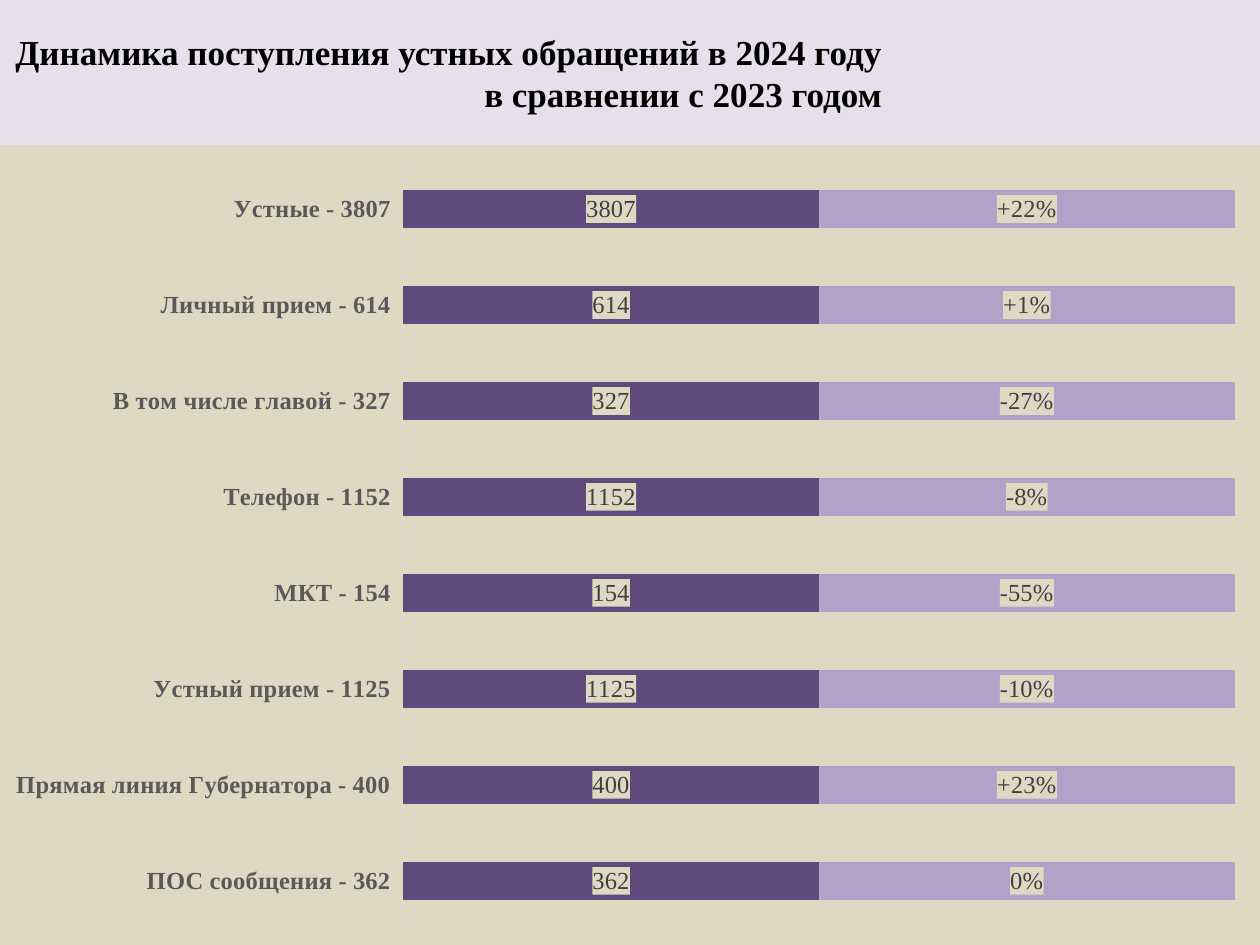
from lxml import etree
from pptx import Presentation
from pptx.chart.data import CategoryChartData
from pptx.dml.color import RGBColor
from pptx.enum.chart import XL_CHART_TYPE, XL_TICK_LABEL_POSITION, XL_TICK_MARK
from pptx.enum.text import MSO_ANCHOR, PP_ALIGN
from pptx.oxml import parse_xml
from pptx.oxml.ns import nsdecls
from pptx.util import Emu, Pt

STACKED = XL_CHART_TYPE.BAR_STACKED_100
NO_TICKS = XL_TICK_MARK.NONE
LOW_LABELS = XL_TICK_LABEL_POSITION.LOW
MIDDLE = MSO_ANCHOR.MIDDLE
RIGHT = PP_ALIGN.RIGHT

PX_PER_INCH = 126
SLIDE_W, SLIDE_H, TITLE_H = 1260, 945, 145
FONT = "Times New Roman"
COLORS = {
    "title_fill": "E6E0EC",
    "title_text": "000000",
    "chart_fill": "DDD9C3",
    "count_bar": "604A7B",
    "change_bar": "B3A2C7",
    "axis_text": "595959",
    "axis_line": "D9D9D9",
    "label_text": "404040",
}

TITLE = "Динамика поступления устных обращений в 2024 году\vв сравнении с 2023 годом"
# Kind of appeal, count in 2024, change from 2023; from top to bottom
APPEALS = [
    ("Устные", 3807, "+22%"),
    ("Личный прием", 614, "+1%"),
    ("В том числе главой", 327, "-27%"),
    ("Телефон", 1152, "-8%"),
    ("МКТ", 154, "-55%"),
    ("Устный прием", 1125, "-10%"),
    ("Прямая линия Губернатора", 400, "+23%"),
    ("ПОС сообщения", 362, "0%"),
]


def px(length):
    return Emu(round(length * 914400 / PX_PER_INCH))


def rgb(name):
    return RGBColor.from_string(COLORS[name])


def style_font(font, size, color, bold):
    font.name = FONT
    font.size = Pt(size)
    font.bold = bold
    font.color.rgb = rgb(color)


def chart_fill():
    """Return a borderless c:spPr in the chart's background colour."""
    return parse_xml(
        f'<c:spPr {nsdecls("c", "a")}><a:solidFill>'
        f'<a:srgbClr val="{COLORS["chart_fill"]}"/></a:solidFill>'
        "<a:ln><a:noFill/></a:ln></c:spPr>"
    )


def add_title(slide):
    title = slide.shapes.title
    title.left, title.top = px(0), px(0)
    title.width, title.height = px(SLIDE_W), px(TITLE_H)
    title.fill.solid()
    title.fill.fore_color.rgb = rgb("title_fill")
    frame = title.text_frame
    frame.text = TITLE
    frame.word_wrap = True
    frame.vertical_anchor = MIDDLE
    frame.margin_left, frame.margin_right = px(12), px(378)
    heading = frame.paragraphs[0]
    heading.alignment = RIGHT
    style_font(heading.font, 20, "title_text", True)
    for run in heading.runs:
        style_font(run.font, 20, "title_text", True)


def label_bars(series, labels):
    for index, text in enumerate(labels):
        frame = series.points[index].data_label.text_frame
        frame.text = text
        style_font(frame.paragraphs[0].runs[0].font, 14, "label_text", False)
    for label_text in series.data_labels._element.findall("c:dLbl/c:tx", series._element.nsmap):
        label_text.addnext(chart_fill())


def place_plot(chart, left, top, width, height):
    """Fix the inner plot area, given as fractions of the chart."""
    plot_area = chart._chartSpace.chart.plotArea
    for old in plot_area.findall("c:layout", plot_area.nsmap):
        plot_area.remove(old)
    layout = parse_xml(f'<c:layout {nsdecls("c")}><c:manualLayout/></c:layout>')
    settings = {
        "layoutTarget": "inner", "xMode": "edge", "yMode": "edge",
        "x": left, "y": top, "w": width, "h": height,
    }
    for tag, value in settings.items():
        namespace = layout.nsmap["c"]
        etree.SubElement(layout[0], f"{{{namespace}}}{tag}").set("val", str(value))
    plot_area.insert(0, layout)


def format_axes(chart):
    kinds = chart.category_axis
    kinds.major_tick_mark = kinds.minor_tick_mark = NO_TICKS
    kinds.tick_label_position = LOW_LABELS
    kinds.has_major_gridlines = False
    kinds.format.line.color.rgb = rgb("axis_line")
    kinds.format.line.width = Pt(0.75)
    style_font(kinds.tick_labels.font, 14, "axis_text", True)
    chart.value_axis.visible = False
    chart.value_axis.has_major_gridlines = False


def add_appeals_chart(slide):
    rows = APPEALS[::-1]
    data = CategoryChartData()
    data.categories = [f"{kind} - {count}" for kind, count, _ in rows]
    for name in ("Series 1", "Series 2"):
        data.add_series(name, [50] * len(rows))
    chart = slide.shapes.add_chart(
        STACKED, px(0), px(TITLE_H), px(SLIDE_W), px(SLIDE_H - TITLE_H), data
    ).chart
    chart.has_legend = False
    chart.has_title = False
    style_font(chart.font, 10, "title_text", False)
    chart._chartSpace.chart.addnext(chart_fill())
    place_plot(chart, 0.32, 0.02, 0.66, 0.96)
    format_axes(chart)

    plot = chart.plots[0]
    plot.gap_width = 150
    plot.overlap = 100
    plot.vary_by_categories = False
    counts = [str(count) for _, count, _ in rows]
    changes = [change for _, _, change in rows]
    bars = (("count_bar", counts), ("change_bar", changes))
    for series, (color, labels) in zip(plot.series, bars):
        series.format.fill.solid()
        series.format.fill.fore_color.rgb = rgb(color)
        label_bars(series, labels)


def main():
    presentation = Presentation()
    presentation.slide_width, presentation.slide_height = px(SLIDE_W), px(SLIDE_H)
    slide = presentation.slides.add_slide(presentation.slide_layouts[5])
    add_title(slide)
    add_appeals_chart(slide)
    presentation.save("out.pptx")


if __name__ == "__main__":
    main()
